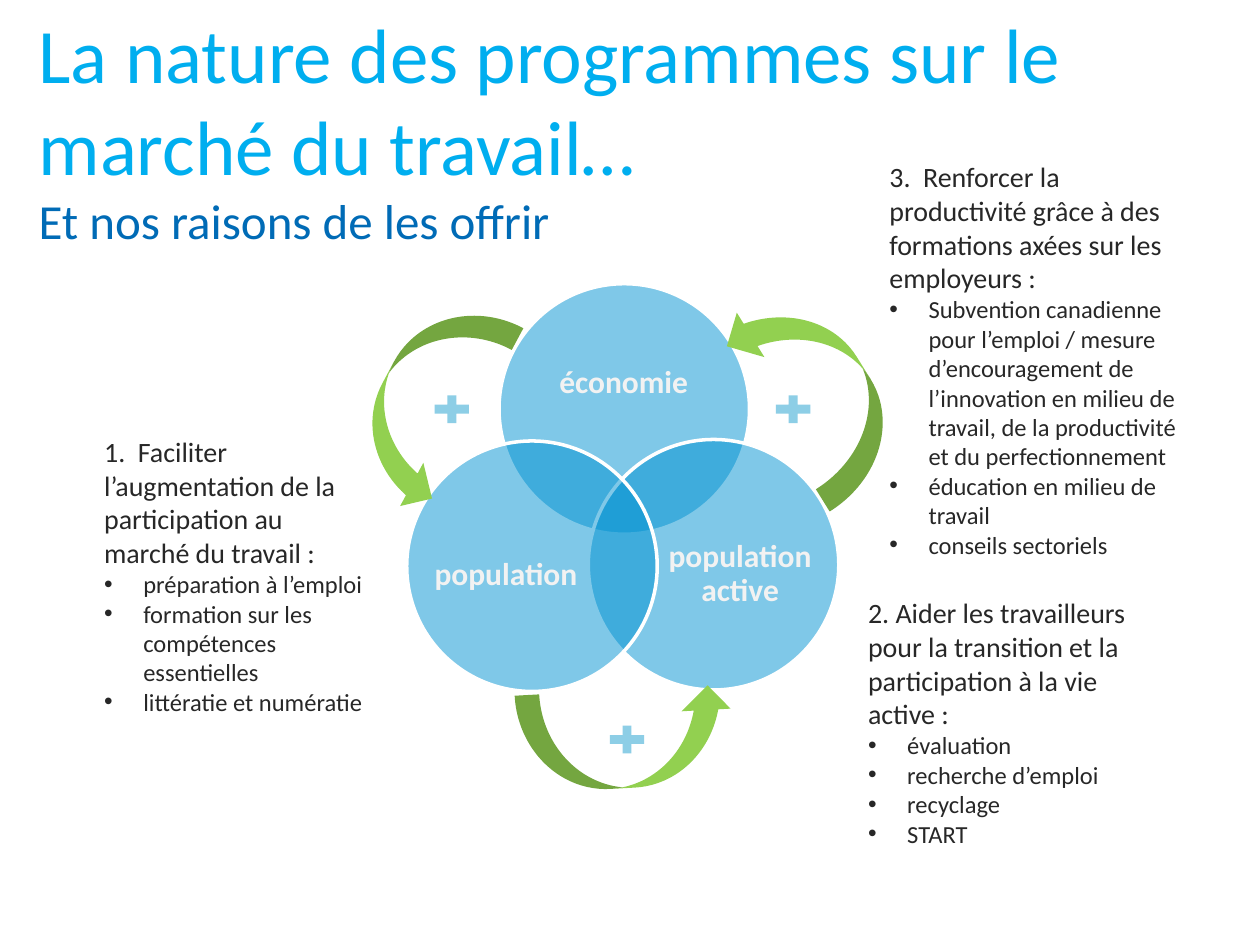
from dataclasses import dataclass

from lxml import etree
from pptx import Presentation
from pptx import util as u
from pptx.dml.color import RGBColor
from pptx.enum import shapes, text
from pptx.oxml import ns

SKY = RGBColor(0x00, 0xAE, 0xEF)
NAVY = RGBColor(0x00, 0x6B, 0xB6)
BLUE = RGBColor(0x00, 0x92, 0xD2)
PALE_BLUE = RGBColor(0x8D, 0xCE, 0xE6)
GREEN = RGBColor(0x92, 0xD0, 0x50)
CHARCOAL = RGBColor(0x27, 0x27, 0x27)
OFF_WHITE = RGBColor(0xF2, 0xF2, 0xF2)
WHITE = RGBColor(0xFF, 0xFF, 0xFF)

BULLET_INDENT = u.Cm(0.79)
NO_MARGINS = dict.fromkeys(
    ("margin_left", "margin_top", "margin_right", "margin_bottom"), 0)


@dataclass(frozen=True)
class Area:
    left: float
    top: float
    width: float
    height: float

    def lengths(self) -> list:
        return [u.Cm(value) for value in
                (self.left, self.top, self.width, self.height)]


@dataclass(frozen=True)
class Circle:
    left: float
    top: float
    label: str
    label_area: Area


@dataclass(frozen=True)
class Arrow:
    area: Area
    rotation: float


@dataclass(frozen=True)
class Goal:
    area: Area
    heading: str
    programs: tuple


CIRCLE_SIZE = 5.05
CIRCLES = (
    Circle(10.06, 5.72, "économie", Area(10.72, 6.6, 3.71, 2.26)),
    Circle(11.86, 8.86, "population active", Area(13.41, 10.19, 3.02, 2.77)),
    Circle(8.2, 8.89, "population", Area(8.69, 10.21, 3.02, 2.77)),
)
ARROWS = (
    Arrow(Area(7.65, 5.89, 1.98, 4.39), 28.2),
    Arrow(Area(11.63, 12.7, 1.98, 4.39), 266.9),
    Arrow(Area(15.39, 5.64, 2.11, 4.45), 148.1),
)
PLUS_SIGNS = (
    Area(8.64, 7.87, 0.94, 0.76),
    Area(12.17, 14.53, 0.94, 0.76),
    Area(15.52, 7.87, 0.94, 0.76),
)
GOALS = (
    Goal(Area(17.68, 3.1, 6.6, 8.38),
         "3.  Renforcer la productivité grâce à des formations axées sur les employeurs :",
         ("Subvention canadienne pour l’emploi / mesure d’encouragement de "
          "l’innovation en milieu de travail, de la productivité et du "
          "perfectionnement",
          "éducation en milieu de travail",
          "conseils sectoriels")),
    Goal(Area(1.85, 8.64, 5.72, 7.19),
         "1.  Faciliter l’augmentation de la participation au marché du travail :",
         ("préparation à l’emploi",
          "formation sur les compétences essentielles",
          "littératie et numératie")),
    Goal(Area(17.25, 11.89, 5.94, 5.38),
         "2. Aider les travailleurs pour la transition et la participation à la vie active :",
         ("évaluation", "recherche d’emploi", "recyclage", "START")),
)


def apply(target, values: dict) -> None:
    for name, value in values.items():
        setattr(target, name, value)


def add_run(paragraph, wording: str, size: float, color: RGBColor,
            bold: bool = False) -> None:
    run = paragraph.add_run()
    run.text = wording
    apply(run.font, {"name": "Calibri", "size": u.Pt(size), "bold": bold})
    run.font.color.rgb = color


def add_text_frame(slide, area: Area, **frame_format):
    frame = slide.shapes.add_textbox(*area.lengths()).text_frame
    apply(frame, {"word_wrap": True, **frame_format})
    return frame


def add_bullet(paragraph) -> None:
    properties = paragraph._p.get_or_add_pPr()
    properties.set("marL", str(BULLET_INDENT))
    properties.set("indent", str(-BULLET_INDENT))
    etree.SubElement(properties, ns.qn("a:buFont"), typeface="Arial")
    etree.SubElement(properties, ns.qn("a:buChar"), char="•")


def add_filled_shape(slide, kind, area: Area, color: RGBColor):
    shape = slide.shapes.add_shape(kind, *area.lengths())
    shape.shadow.inherit = False
    shape.fill.solid()
    shape.fill.fore_color.rgb = color
    shape.line.fill.background()
    return shape


def add_title(slide) -> None:
    paragraph = add_text_frame(slide, Area(0.53, 0, 24.28, 3.94)).paragraphs[0]
    add_run(paragraph, "La nature des programmes sur le marché du travail… ", 44, SKY)
    paragraph.add_line_break()
    add_run(paragraph, "Et nos raisons de les offrir", 28, NAVY)


def add_circle(slide, circle: Circle) -> None:
    area = Area(circle.left, circle.top, CIRCLE_SIZE, CIRCLE_SIZE)
    shape = add_filled_shape(slide, shapes.MSO_SHAPE.OVAL, area, BLUE)
    color = shape._element.spPr.find(ns.qn("a:solidFill"))[0]
    etree.SubElement(color, ns.qn("a:alpha"), val="50000")
    shape.line.color.rgb = WHITE
    shape.line.width = u.Pt(2)
    frame = add_text_frame(slide, circle.label_area, **NO_MARGINS,
                           vertical_anchor=text.MSO_ANCHOR.MIDDLE)
    paragraph = frame.paragraphs[0]
    apply(paragraph, {"alignment": text.PP_ALIGN.CENTER, "line_spacing": 0.9})
    add_run(paragraph, circle.label, 18, OFF_WHITE, bold=True)


def add_arrow(slide, arrow: Arrow) -> None:
    shape = add_filled_shape(
        slide, shapes.MSO_SHAPE.CURVED_RIGHT_ARROW, arrow.area, GREEN)
    shape.rotation = arrow.rotation


def add_goal(slide, goal: Goal) -> None:
    frame = add_text_frame(slide, goal.area)
    add_run(frame.paragraphs[0], goal.heading, 16, CHARCOAL)
    for program in goal.programs:
        paragraph = frame.add_paragraph()
        add_bullet(paragraph)
        add_run(paragraph, program, 14, CHARCOAL)


def main() -> None:
    presentation = Presentation()
    apply(presentation, {"slide_width": u.Cm(25.4), "slide_height": u.Cm(19.05)})
    slide = presentation.slides.add_slide(presentation.slide_layouts[6])
    add_title(slide)
    for circle in CIRCLES:
        add_circle(slide, circle)
    for arrow in ARROWS:
        add_arrow(slide, arrow)
    for area in PLUS_SIGNS:
        add_filled_shape(slide, shapes.MSO_SHAPE.MATH_PLUS, area, PALE_BLUE)
    for goal in GOALS:
        add_goal(slide, goal)
    presentation.save("out.pptx")


if __name__ == "__main__":
    main()
